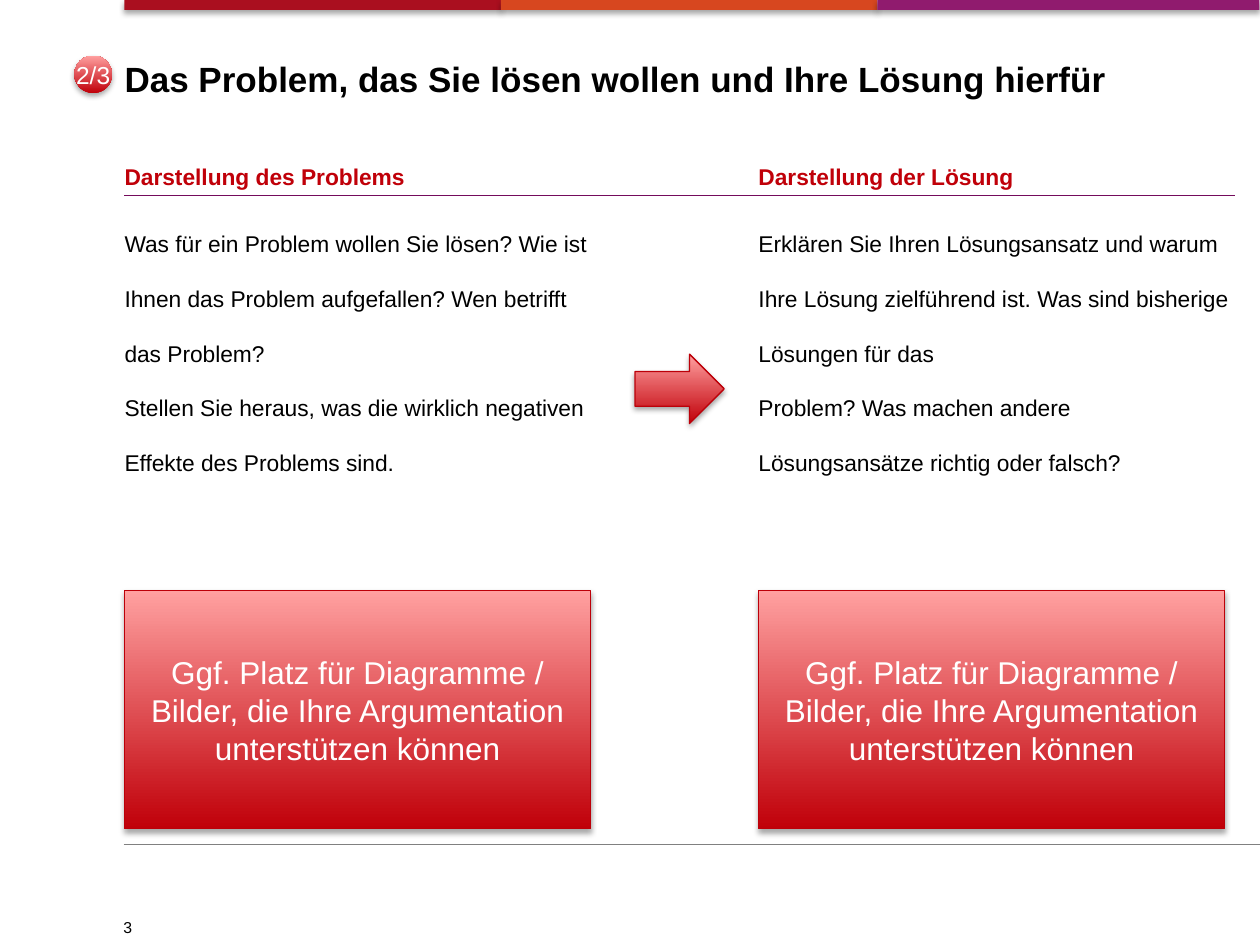
from pptx import Presentation
from pptx.util import Cm, Pt
from pptx.dml.color import RGBColor as RGB
from pptx.enum.shapes import MSO_SHAPE as Shp, MSO_CONNECTOR as Con
from pptx.enum.text import MSO_ANCHOR as Anc, MSO_AUTO_SIZE as Fit, PP_ALIGN as Al
from pptx.oxml import parse_xml
from pptx.oxml.ns import nsdecls
from pptx.oxml.xmlchemy import OxmlElement as Elem

HUES = {
    "ink": "000000", "white": "FFFFFF", "gray": "808080",
    "red": "C00009", "pink": "FFA0A0", "edge": "BC0009", "rule": "740B5C",
    "bar1": "AA0F1F", "bar2": "D7471F", "bar3": "901B6E",
}
SHADOW = (
    f'<a:outerShdw {nsdecls("a")} blurRad="40000" dist="23000" dir="5400000"'
    ' rotWithShape="0"><a:srgbClr val="000000"><a:alpha val="35000"/>'
    '</a:srgbClr></a:outerShdw>'
)


def hue(name):
    return RGB.from_string(HUES[name])


class Deck:
    """Holds the house style and the current slide."""

    font = "Arial"

    def __init__(self, slide):
        self.slide = slide
        self.shapes = slide.shapes

    def words(self, shape, paras, size, color="ink", bold=False, space=1.0,
              align=Al.LEFT, anchor=Anc.TOP, pad=0, wrap=True):
        frame = shape.text_frame
        frame.text = "\n".join(paras)
        side, top = pad, pad / 2
        form = {
            "auto_size": Fit.NONE, "word_wrap": wrap, "vertical_anchor": anchor,
            "margin_left": Cm(side), "margin_right": Cm(side),
            "margin_top": Cm(top), "margin_bottom": Cm(top),
        }
        for key, val in form.items():
            setattr(frame, key, val)
        look = {"name": self.font, "size": Pt(size), "bold": bold}
        for para in frame.paragraphs:
            prop = para._p.get_or_add_pPr()
            prop.set("marL", "0")
            prop.set("indent", "0")
            prop.append(Elem("a:buNone"))
            gaps = {"alignment": align, "line_spacing": space,
                    "space_before": Pt(0), "space_after": Pt(0)}
            for key, val in gaps.items():
                setattr(para, key, val)
            for run in para.runs:
                for key, val in look.items():
                    setattr(run.font, key, val)
                run.font.color.rgb = hue(color)

    def holder(self, idx, box, paras, size, **style):
        shape = self.slide.placeholders[idx]
        for key, val in zip(("left", "top", "width", "height"), box):
            setattr(shape, key, Cm(val))
        self.words(shape, paras, size, **style)

    def label(self, box, text, size, **style):
        self.words(self.shapes.add_textbox(*map(Cm, box)), [text], size, **style)

    def block(self, kind, box, fill=None, edge=None):
        shape = self.shapes.add_shape(kind, *map(Cm, box))
        if fill:
            shape.fill.solid()
            shape.fill.fore_color.rgb = hue(fill)
        else:  # red at the bottom, pink at the top
            shape.fill.gradient()
            shape.fill.gradient_angle = 90
            for stop, name in zip(shape.fill.gradient_stops, ("red", "pink")):
                stop.color.rgb = hue(name)
        if edge:
            shape.line.color.rgb = hue(edge)
            shape.line.width = Pt(0.75)
        else:
            shape.line.fill.background()
        shape.shadow.inherit = False
        shape._element.spPr.find(".//{*}effectLst").append(parse_xml(SHADOW))
        return shape

    def rule(self, left, right, y, color, width):
        line = self.shapes.add_connector(
            Con.STRAIGHT, Cm(left), Cm(y), Cm(right), Cm(y))
        line.line.color.rgb = hue(color)
        line.line.width = Pt(width)
        line._element.spPr.append(Elem("a:effectLst"))


def main():
    prs = Presentation()
    prs.slide_width, prs.slide_height = Cm(25.4), Cm(19.05)
    deck = Deck(prs.slides.add_slide(prs.slide_layouts[4]))
    left, right, end = 2.51, 15.29, 24.89

    # Frame: colour bars, foot rule and page number
    step = 7.59
    for i, wide in enumerate((step, step, 7.7)):
        deck.block(Shp.RECTANGLE, (left + i * step, 0, wide, 0.2), f"bar{i + 1}")
    deck.rule(2.49, 25.4, 17.02, "gray", 0.5)
    deck.label((2.49, 18.47, 3.4, 0.48), "3", 9, space=Pt(11.8))

    # Title and head rule
    deck.holder(0, (left, 1.02, 22.38, 2.44),
                ["Das Problem, das Sie lösen wollen und Ihre Lösung hierfür"],
                20, bold=True, space=Pt(28))
    deck.rule(left, end, 3.94, "rule", 0.75)

    # Two columns: heading, text and chart space
    cols = [
        (left, "Darstellung des Problems", [
            "Was für ein Problem wollen Sie lösen? Wie ist Ihnen das Problem "
            "aufgefallen? Wen betrifft das Problem?",
            "Stellen Sie heraus, was die wirklich negativen Effekte des "
            "Problems sind."]),
        (right, "Darstellung der Lösung", [
            "Erklären Sie Ihren Lösungsansatz und warum Ihre Lösung "
            "zielführend ist. Was sind bisherige Lösungen für das",
            "Problem? Was machen andere Lösungsansätze richtig oder falsch?"]),
    ]
    for i, (x, head, body) in enumerate(cols):
        deck.holder(2 * i + 1, (x, 3.28, 9.4, 0.61), [head], 13,
                    color="red", bold=True)
        deck.holder(2 * i + 2, (x, 4.09, 9.6, 5.38), body, 13, space=2.0)
        space = deck.block(Shp.RECTANGLE, (x, 11.91, 9.4, 4.8), edge="edge")
        deck.words(space, ["Ggf. Platz für Diagramme / Bilder, die Ihre "
                           "Argumentation unterstützen können"], 18,
                   color="white", align=Al.CENTER, anchor=Anc.MIDDLE, pad=0.25)

    # Arrow from problem to solution
    deck.block(Shp.RIGHT_ARROW, (12.8, 7.14, 1.8, 1.4), edge="edge")

    # Step badge
    badge = deck.block(Shp.OVAL, (1.5, 1.12, 0.76, 0.76))
    deck.words(badge, ["2/3"], 14, color="white", align=Al.CENTER,
               anchor=Anc.MIDDLE, wrap=False)

    prs.save("out.pptx")


if __name__ == "__main__":
    main()
